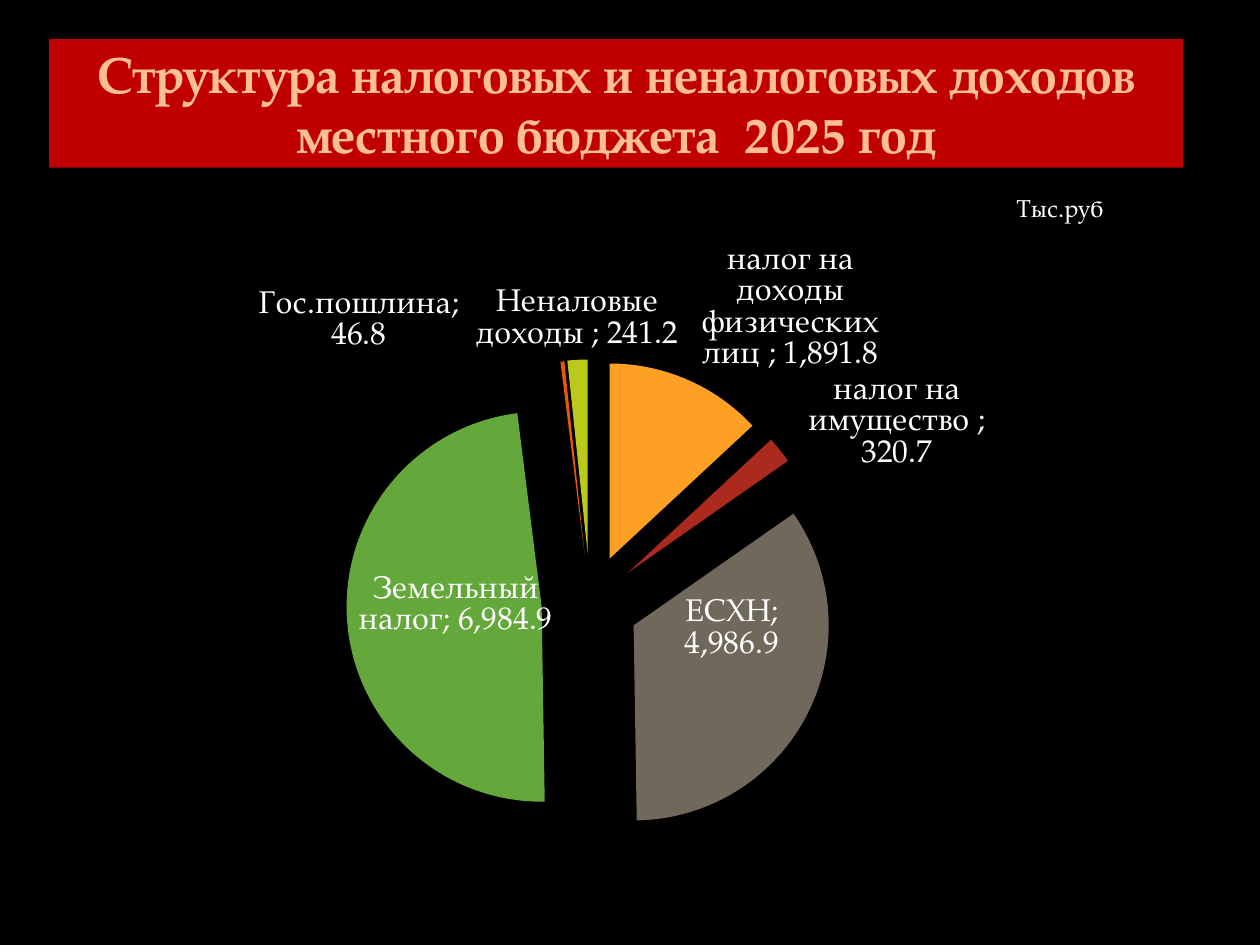
from dataclasses import dataclass

import pptx
import pptx.chart.data
import pptx.dml.color
import pptx.enum.chart
import pptx.enum.shapes
import pptx.enum.text
import pptx.oxml
import pptx.oxml.ns
import pptx.util

Inches = pptx.util.Inches
ALIGN = pptx.enum.text.PP_ALIGN
ANCHOR = pptx.enum.text.MSO_ANCHOR
NUMBER_FORMAT = "#,##0.0"
SEPARATOR = "; "
EXPLOSION = 25


@dataclass(frozen=True)
class Theme:
    font: str = "TeX Gyre Pagella"
    background: str = "000000"
    banner: str = "C00000"
    title: str = "FFC091"
    text: str = "FFFFFF"
    title_size: float = 28.8
    label_size: float = 18
    unit_size: float = 14


THEME = Theme()

# name, value, colour, label position, label shift as a share of the chart
TAXES = [
    ("налог на доходы физических лиц ", 1891.8, "FDA023", "outEnd", (0.01, 0)),
    ("налог на имущество ", 320.7, "AA2B1E", "outEnd", (0.02, 0.04)),
    ("ЕСХН", 4986.9, "71685C", "ctr", (0.01, -0.06)),
    ("Земельный налог", 6984.9, "64A73B", "ctr", (0.01, -0.01)),
    ("Гос.пошлина", 46.8, "EB5605", "outEnd", (-0.09, 0)),
    ("Неналовые доходы ", 241.2, "B9CA1A", "outEnd", None),
]


def rgb(value):
    return pptx.dml.color.RGBColor.from_string(value)


def apply(target, values):
    for name, value in values.items():
        setattr(target, name, value)


def paint(fill, color):
    fill.solid()
    fill.fore_color.rgb = rgb(color)


def set_font(font, size, color, bold=False):
    apply(font, {"name": THEME.font, "size": pptx.util.Pt(size), "bold": bold})
    font.color.rgb = rgb(color)


def chart_xml(body):
    return pptx.oxml.parse_xml(body.replace(">", f" {pptx.oxml.ns.nsdecls('c')}>", 1))


def write(sp, text, size, color, bold=False, align=ALIGN.LEFT, anchor=ANCHOR.TOP):
    tf = sp.text_frame
    apply(tf, {"word_wrap": True, "vertical_anchor": anchor})
    p = tf.paragraphs[0]
    p.alignment = align
    r = p.add_run()
    r.text = text
    set_font(r.font, size, color, bold)


def add_banner(s, text):
    sp = s.shapes.add_shape(pptx.enum.shapes.MSO_SHAPE.RECTANGLE,
                            Inches(0.39), Inches(0.31), Inches(9), Inches(1.02))
    sp.shadow.inherit = False
    paint(sp.fill, THEME.banner)
    sp.line.fill.background()
    write(sp, text, THEME.title_size, THEME.title, True, ALIGN.CENTER, ANCHOR.MIDDLE)


def add_unit(s, text):
    sp = s.shapes.add_textbox(Inches(7.97), Inches(1.48), Inches(1.33), Inches(0.34))
    write(sp, text, THEME.unit_size, THEME.text)


def place_plot(chart, x, y, w, h):
    """Fix the plot area, given as shares of the chart."""
    area = chart.plots[0]._element.getparent()
    for old in area.findall(pptx.oxml.ns.qn("c:layout")):
        area.remove(old)
    sizes = "".join(f'<c:{tag} val="{value}"/>'
                    for tag, value in zip("xywh", (x, y, w, h)))
    area.insert(0, chart_xml(
        '<c:layout><c:manualLayout><c:layoutTarget val="inner"/>'
        '<c:xMode val="edge"/><c:yMode val="edge"/>'
        f"{sizes}</c:manualLayout></c:layout>"))


def point_label(index, position, shift):
    layout = ""
    if shift:
        layout = (f'<c:layout><c:manualLayout><c:x val="{shift[0]}"/>'
                  f'<c:y val="{shift[1]}"/></c:manualLayout></c:layout>')
    shown = {"LegendKey": 0, "Val": 1, "CatName": 1, "SerName": 0,
             "Percent": 0, "BubbleSize": 0}
    flags = "".join(f'<c:show{name} val="{on}"/>' for name, on in shown.items())
    return chart_xml(
        f'<c:dLbl><c:idx val="{index}"/>{layout}'
        f'<c:numFmt formatCode="{NUMBER_FORMAT}" sourceLinked="0"/>'
        f'<c:dLblPos val="{position}"/>{flags}'
        f"<c:separator>{SEPARATOR}</c:separator></c:dLbl>")


def label_slices(series):
    labels = series.data_labels
    apply(labels, {
        "number_format": NUMBER_FORMAT,
        "number_format_is_linked": False,
        "show_value": True,
        "show_category_name": True,
        "position": pptx.enum.chart.XL_LABEL_POSITION.OUTSIDE_END,
    })
    set_font(labels.font, THEME.label_size, THEME.text)
    root = series._element.find(pptx.oxml.ns.qn("c:dLbls"))
    root.find(pptx.oxml.ns.qn("c:showBubbleSize")).addnext(
        chart_xml(f"<c:separator>{SEPARATOR}</c:separator>"))
    for i, (_, _, _, position, shift) in enumerate(TAXES):
        root.insert(i, point_label(i, position, shift))


def add_pie(s):
    data = pptx.chart.data.CategoryChartData(number_format=NUMBER_FORMAT)
    data.categories = [tax[0] for tax in TAXES]
    data.add_series("Series 1", [tax[1] for tax in TAXES])
    chart = s.shapes.add_chart(pptx.enum.chart.XL_CHART_TYPE.PIE, Inches(0.5),
                               Inches(1.75), Inches(9), Inches(5.15), data).chart
    apply(chart, {"has_title": False, "has_legend": False})
    set_font(chart.font, THEME.label_size, THEME.text)
    plot = chart.plots[0]
    plot.vary_by_categories = True
    series = plot.series[0]
    for i, tax in enumerate(TAXES):
        paint(series.points[i].format.fill, tax[2])
    series._element.find(pptx.oxml.ns.qn("c:tx")).addnext(
        chart_xml(f'<c:explosion val="{EXPLOSION}"></c:explosion>'.replace(
            f' val="{EXPLOSION}">', f' val="{EXPLOSION}" >')))
    label_slices(series)
    place_plot(chart, 0.25, 0.21, 0.43, 0.76)


def main():
    prs = pptx.Presentation()
    apply(prs, {"slide_width": Inches(10), "slide_height": Inches(7.5)})
    s = prs.slides.add_slide(prs.slide_layouts[6])
    paint(s.background.fill, THEME.background)
    add_banner(s, "Структура налоговых и неналоговых доходов местного бюджета  2025 год")
    add_pie(s)
    add_unit(s, "Тыс.руб")
    prs.save("out.pptx")


if __name__ == "__main__":
    main()
